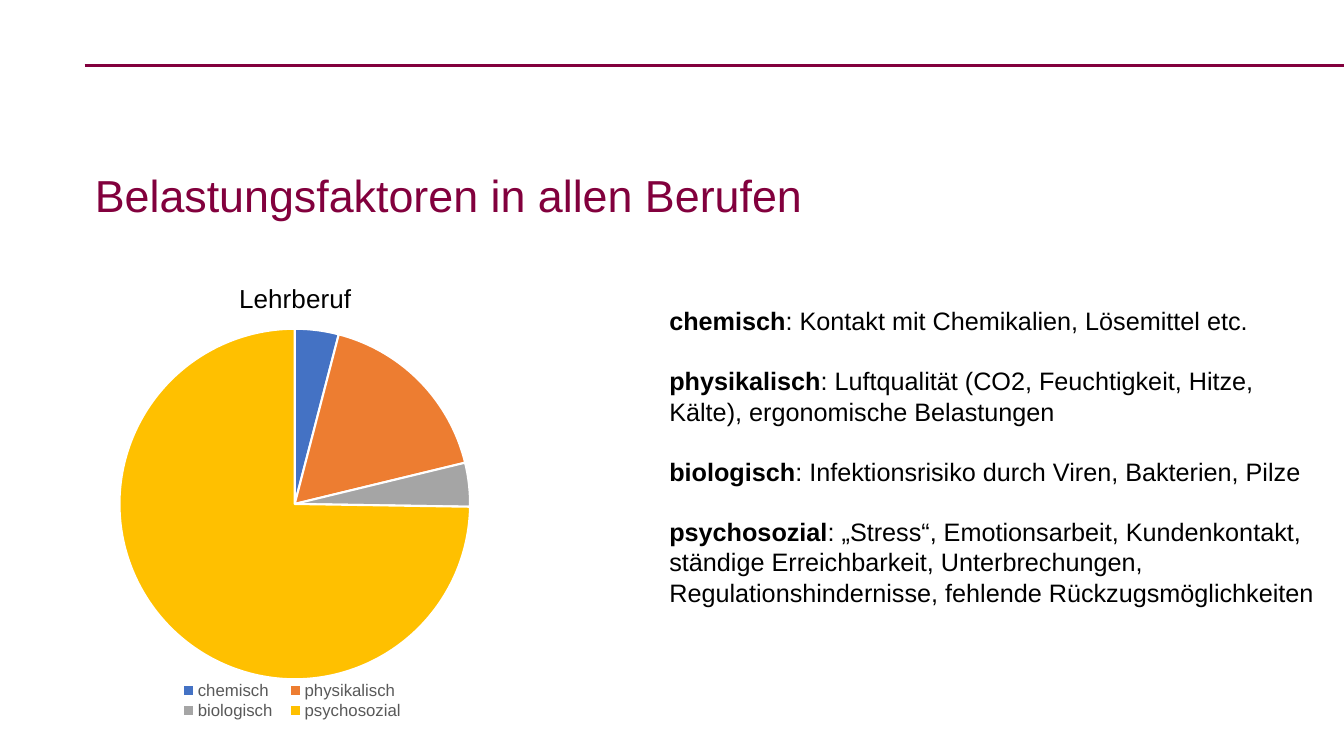
from pptx import Presentation
from pptx.chart.data import CategoryChartData
from pptx.dml.color import RGBColor
from pptx.enum import chart as ch, shapes, text
from pptx.oxml import parse_xml
from pptx.oxml.ns import nsdecls
from pptx.util import Inches, Pt


def color(hex_value):
    return RGBColor.from_string(hex_value)


def chart_layout(x, y, w=None, h=None, inner=False):
    """Manual layout in fractions of the chart area."""
    parts = [("layoutTarget", "inner")] if inner else []
    parts += [("xMode", "edge"), ("yMode", "edge"), ("x", x), ("y", y)]
    if w:
        parts += [("w", w), ("h", h)]
    body = "".join(f'<c:{tag} val="{val}"/>' for tag, val in parts)
    return parse_xml(f'<c:layout {nsdecls("c")}><c:manualLayout>{body}'
                     '</c:manualLayout></c:layout>')


BURGUNDY, BLACK, GRAY, WHITE = "82003D", "000000", "595959", "FFFFFF"

prs = Presentation()
prs.slide_width, prs.slide_height = Inches(13.33), Inches(7.5)
slide = prs.slides.add_slide(prs.slide_layouts[5])

# Rule across the top
rule = slide.shapes.add_connector(shapes.MSO_CONNECTOR.STRAIGHT, Inches(0.84),
                                  Inches(0.65), Inches(13.33), Inches(0.65))
rule.line.color.rgb = color(BURGUNDY)
rule.line.width = Pt(1.5)
rule._element.spPr.append(parse_xml(f'<a:effectLst {nsdecls("a")}/>'))

# Heading
heading = slide.shapes.title
heading.left, heading.top = Inches(0.84), Inches(1.29)
heading.width, heading.height = Inches(11.89), Inches(0.96)
heading.text_frame.text = "Belastungsfaktoren in allen Berufen"
heading.text_frame.vertical_anchor = text.MSO_ANCHOR.BOTTOM
line = heading.text_frame.paragraphs[0]
line.alignment = text.PP_ALIGN.LEFT
line.line_spacing = 0.9
line.font.name, line.font.size = "Arial", Pt(32)
line.font.color.rgb = color(BURGUNDY)

# Pie of strain factors
shares = [("chemisch", 4, "4472C4"), ("physikalisch", 17, "ED7D31"),
          ("biologisch", 4, "A5A5A5"), ("psychosozial", 74, "FFC000")]
data = CategoryChartData()
data.categories = [name for name, _, _ in shares]
data.add_series("Series 1", [value for _, value, _ in shares])
pie = slide.shapes.add_chart(ch.XL_CHART_TYPE.PIE, Inches(0.5), Inches(2.51),
                             Inches(4.8), Inches(4.7), data).chart
pie.font.name, pie.font.size = "Arial", Pt(10)
pie.font.color.rgb = color(BLACK)
pie.plots[0].vary_by_categories = True
for i, (_, _, fill) in enumerate(shares):
    slice_format = pie.plots[0].series[0].points[i].format
    slice_format.fill.solid()
    slice_format.fill.fore_color.rgb = color(fill)
    slice_format.line.color.rgb = color(WHITE)
    slice_format.line.width = Pt(1.5)

# Pie title and legend
pie.has_title = True
pie.chart_title.include_in_layout = False
pie.chart_title.text_frame.text = "Lehrberuf"
caption = pie.chart_title.text_frame.paragraphs[0].font
caption.name, caption.size, caption.bold = "Arial", Pt(18.6), False
caption.color.rgb = color(BLACK)
pie.has_legend = True
legend = pie.legend
legend.position = ch.XL_LEGEND_POSITION.BOTTOM
legend.include_in_layout = False
legend.font.name, legend.font.size = "Arial", Pt(12)
legend.font.color.rgb = color(GRAY)

# Placement of the chart parts
plot_area = pie._chartSpace.chart.plotArea
for element, successor, layout in [
        (pie.chart_title._element, "c:overlay", chart_layout(0.38, 0.05)),
        (plot_area, "c:pieChart", chart_layout(0.14, 0.16, 0.73, 0.74, True)),
        (legend._element, "c:overlay", chart_layout(0.25, 0.9, 0.5, 0.09))]:
    for old in element.findall(layout.tag):
        element.remove(old)
    element.insert_element_before(layout, successor)

# Explanations of the factors
explanations = [
    ("chemisch", "Kontakt mit Chemikalien, Lösemittel etc."),
    ("physikalisch", "Luftqualität (CO2, Feuchtigkeit, Hitze, Kälte), "
                     "ergonomische Belastungen"),
    ("biologisch", "Infektionsrisiko durch Viren, Bakterien, Pilze"),
    ("psychosozial", "„Stress“, Emotionsarbeit, Kundenkontakt, ständige "
                     "Erreichbarkeit, Unterbrechungen, Regulationshindernisse, "
                     "fehlende Rückzugsmöglichkeiten"),
]
factors = slide.shapes.add_textbox(Inches(6.54), Inches(2.98),
                                   Inches(6.62), Inches(3.43)).text_frame
factors.word_wrap = True
for i, (factor, explanation) in enumerate(explanations):
    entry = factors.add_paragraph() if i else factors.paragraphs[0]
    if i:
        entry.space_before = Pt(21.5)
    entry.font.name, entry.font.size = "Arial", Pt(18)
    entry.font.color.rgb = color(BLACK)
    term = entry.add_run()
    term.text = factor
    term.font.bold = True
    entry.add_run().text = f": {explanation}"

prs.save("out.pptx")
